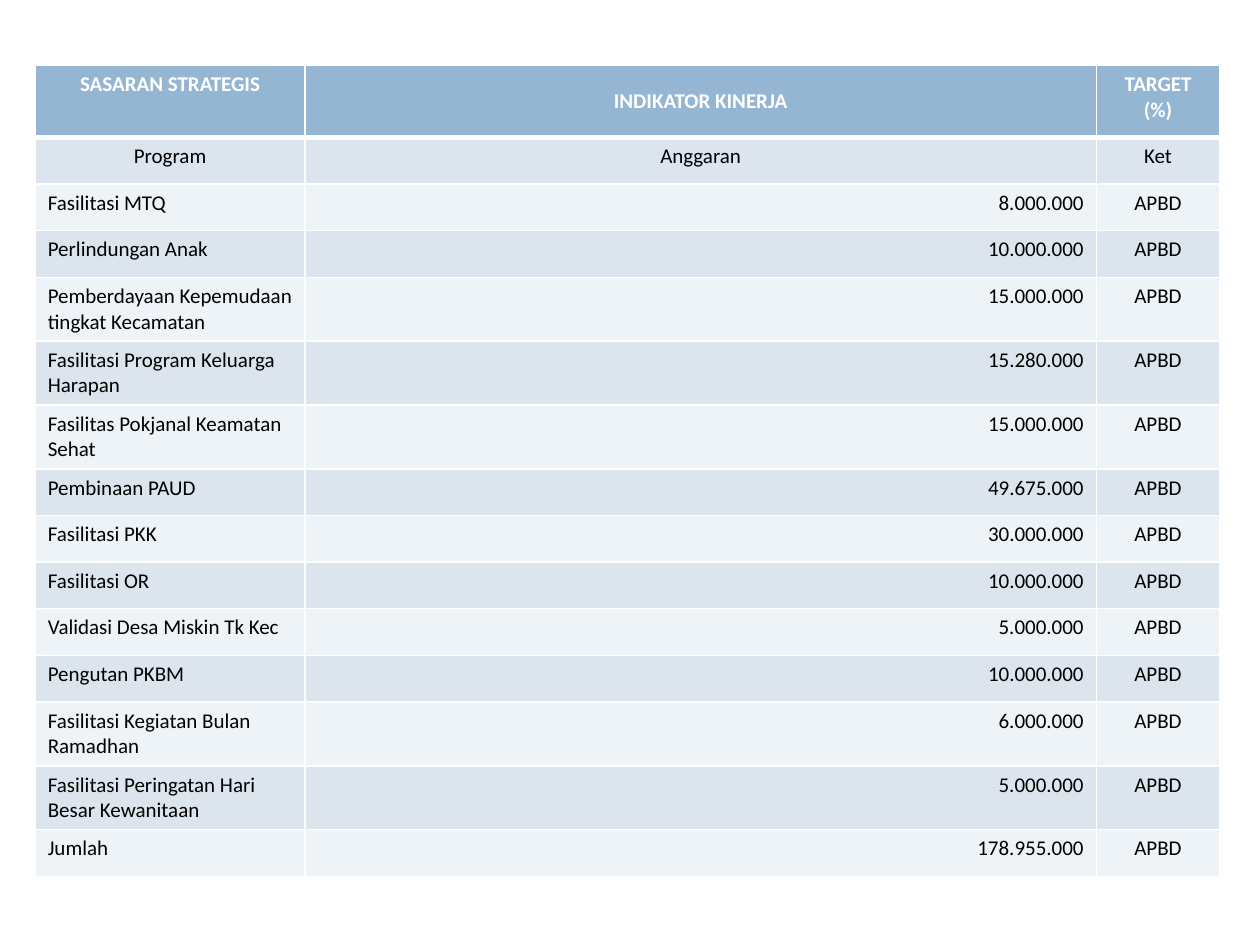
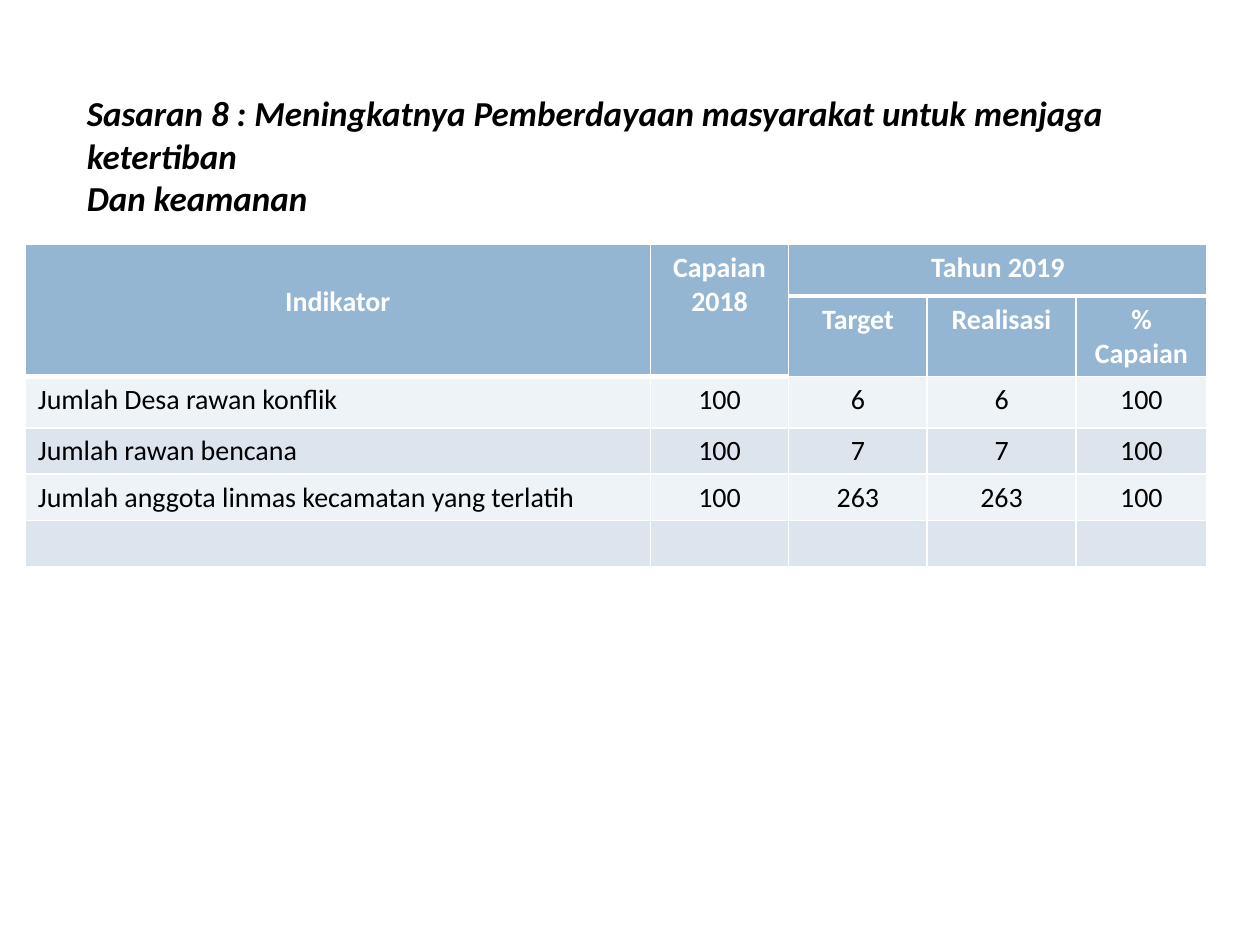
from lxml import etree
from pptx import Presentation
from pptx.dml.color import RGBColor
from pptx.enum.text import MSO_ANCHOR, PP_ALIGN
from pptx.oxml.ns import qn
from pptx.util import Cm, Pt

LEFT, MID, RIGHT = PP_ALIGN.LEFT, PP_ALIGN.CENTER, PP_ALIGN.RIGHT
CENTRED = MSO_ANCHOR.MIDDLE

# Shared look
FONT = "Calibri"
BLUE = RGBColor(0x94, 0xB6, 0xD2)
DARK = RGBColor(0xDC, 0xE5, 0xEE)
PALE = RGBColor(0xEE, 0xF3, 0xF7)
WHITE = RGBColor(0xFF, 0xFF, 0xFF)
BLACK = RGBColor(0, 0, 0)
THIN, THICK = Pt(1), Pt(3)


def write(par, text, size, color, bold=False, italic=False):
    run = par.add_run()
    run.text = text
    font = run.font
    font.name, font.size, font.bold, font.italic = FONT, Pt(size), bold, italic
    font.color.rgb = color


def grid(slide, left, top, cols, rows, data, size, heads, aligns, heavy):
    """Draw a banded table; heavy holds the cells with a thick lower edge."""
    frame = slide.shapes.add_table(len(rows), len(cols), Cm(left), Cm(top),
                                   Cm(sum(cols)), Cm(sum(rows)))
    table = frame.table
    table.first_row = table.horz_banding = False
    for col, width in zip(table.columns, cols):
        col.width = Cm(width)
    for row, height in zip(table.rows, rows):
        row.height = Cm(height)

    for r, line in enumerate(data):
        for c, text in enumerate(line):
            cell = table.cell(r, c)
            head = r < heads
            # White edges
            props = cell._tc.get_or_add_tcPr()
            above = THICK if (r - 1, c) in heavy else THIN
            below = THICK if (r, c) in heavy else THIN
            for side, width in zip("LRTB", (THIN, THIN, above, below)):
                edge = etree.SubElement(props, qn("a:ln" + side), w=str(width))
                fill = etree.SubElement(edge, qn("a:solidFill"))
                etree.SubElement(fill, qn("a:srgbClr"), val=str(WHITE))
            # Band and text
            cell.fill.solid()
            cell.fill.fore_color.rgb = BLUE if head else DARK if r % 2 else PALE
            par = cell.text_frame.paragraphs[0]
            par.alignment = MID if head else aligns[c]
            if text:
                write(par, text, size, WHITE if head else BLACK, head)
            else:
                etree.SubElement(par._p, qn("a:endParaRPr"), sz=str(size * 100))
    return table


deck = Presentation()
deck.slide_width, deck.slide_height = Cm(25.4), Cm(19.05)
blank = deck.slide_layouts[6]

# Slide 1: programmes and their budgets
costs = [
    ("Fasilitasi MTQ", "8.000.000"),
    ("Perlindungan Anak", "10.000.000"),
    ("Pemberdayaan Kepemudaan tingkat Kecamatan", "15.000.000"),
    ("Fasilitasi Program Keluarga Harapan", "15.280.000"),
    ("Fasilitas Pokjanal Keamatan Sehat", "15.000.000"),
    ("Pembinaan PAUD", "49.675.000"),
    ("Fasilitasi PKK", "30.000.000"),
    ("Fasilitasi OR", "10.000.000"),
    ("Validasi Desa Miskin Tk Kec", "5.000.000"),
    ("Pengutan PKBM", "10.000.000"),
    ("Fasilitasi Kegiatan Bulan Ramadhan", "6.000.000"),
    ("Fasilitasi Peringatan Hari Besar Kewanitaan", "5.000.000"),
    ("Jumlah", "178.955.000"),
]
data = [("SASARAN STRATEGIS", "INDIKATOR KINERJA", "TARGET (%)"),
        ("Program", "Anggaran", "Ket")]
data += [(name, cost, "APBD") for name, cost in costs]
slide = deck.slides.add_slide(blank)
table = grid(slide, 0.71, 1.32, [5.44, 15.95, 2.49],
             [1.45] + [0.94] * (len(data) - 1), data, 12, 1,
             (LEFT, RIGHT, MID), {(0, c) for c in range(3)})
table.cell(0, 1).vertical_anchor = CENTRED
for c in range(3):
    table.cell(1, c).text_frame.paragraphs[0].alignment = MID

# Slide 2: title
slide = deck.slides.add_slide(blank)
box = slide.shapes.add_textbox(Cm(1.5), Cm(1.73), Cm(22.17), Cm(1.96))
text = box.text_frame
text.word_wrap = True
write(text.paragraphs[0],
      "Sasaran 8 : Meningkatnya Pemberdayaan masyarakat untuk menjaga ketertiban",
      20, BLACK, True, True)
write(text.add_paragraph(), "Dan keamanan", 20, BLACK, True, True)

# Slide 2: targets and results
data = [
    ("Indikator", "Capaian 2018", "Tahun 2019", "", ""),
    ("", "", "Target", "Realisasi", "% Capaian"),
    ("Jumlah Desa rawan konflik", "100", "6", "6", "100"),
    ("Jumlah rawan bencana", "100", "7", "7", "100"),
    ("Jumlah anggota linmas kecamatan yang terlatih", "100", "263", "263", "100"),
    ("",) * 5,
]
heavy = {(0, c) for c in range(5)} | {(1, 0), (1, 1)}
table = grid(slide, 0.51, 4.93, [12.6, 2.79, 2.79, 3, 2.64],
             [1.04, 1.04, 1.04, 0.76, 0.81, 0.69], data, 16, 2,
             (LEFT, MID, MID, MID, MID), heavy)
for c in range(2):
    table.cell(0, c).merge(table.cell(1, c))
table.cell(0, 2).merge(table.cell(0, 4))
table.cell(0, 0).margin_top = Cm(0.81)

deck.save("out.pptx")
